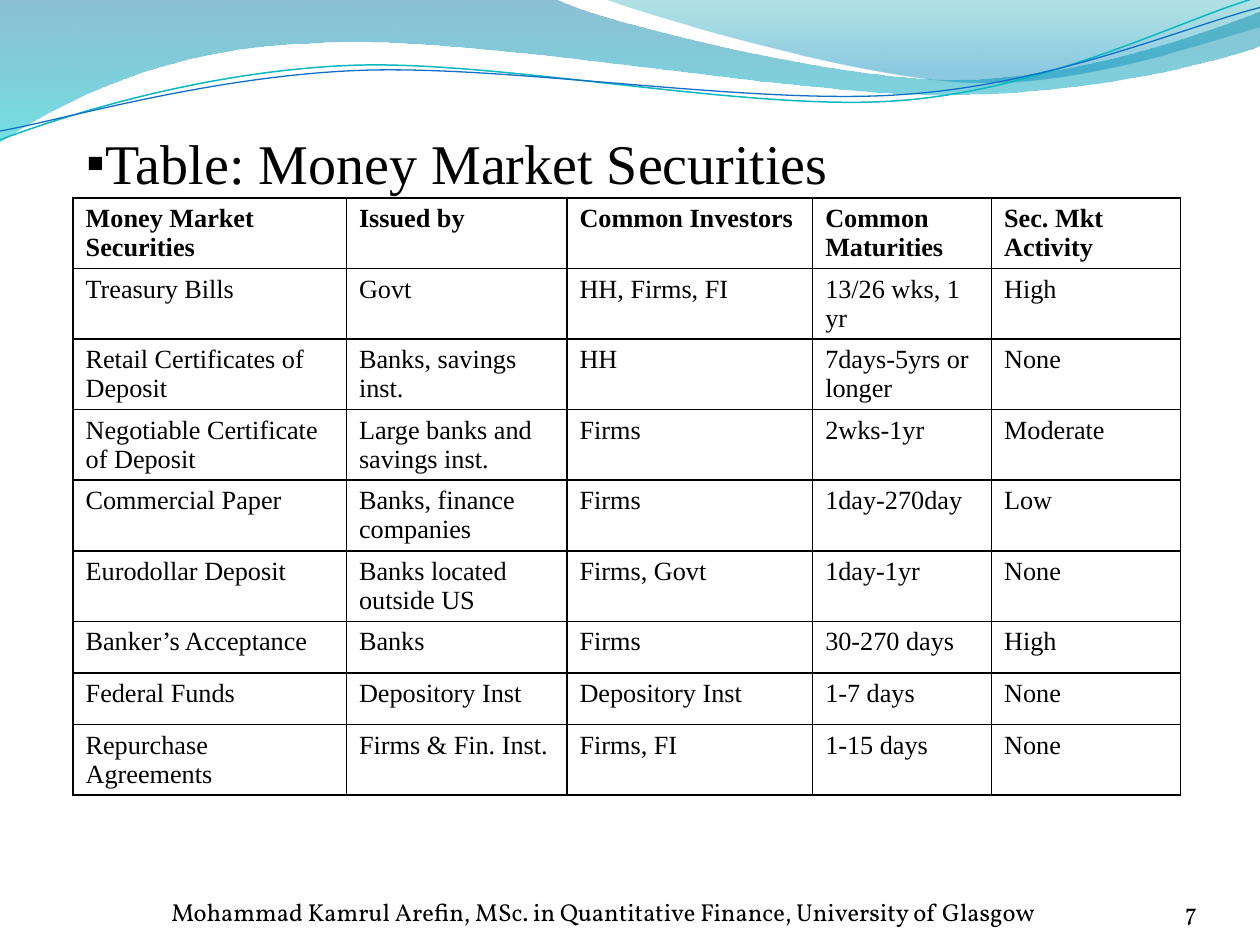
from lxml import etree
from pptx import Presentation
from pptx.dml.color import RGBColor
from pptx.enum import text as t
from pptx.oxml import ns
from pptx.util import Inches, Pt

SERIF = "Times New Roman"


def add_run(para, words, size, font, bold=False):
    run = para.add_run()
    run.text = words
    run.font.size = Pt(size)
    run.font.name = font
    run.font.bold = bold
    run.font.color.rgb = RGBColor.from_string("000000")


def add_wave(start, parts, closed):
    """Draw an outline; a part is a line end (x, y) or a Bézier (x1, y1, x2, y2, x, y)."""
    pen = slide.shapes.build_freeform(Inches(start[0]), Inches(start[1]), scale=1.0)
    for part in parts:
        dots = [(Inches(x), Inches(y)) for x, y in zip(part[::2], part[1::2])]
        pen.add_line_segments(dots, close=False)
    wave = pen.convert_to_shape()
    wave.shadow.inherit = False
    # Join the three points of each Bézier into one curve
    path = next(wave._element.iter(ns.qn("a:path")))
    steps = iter(path.findall(ns.qn("a:lnTo")))
    for part in parts:
        step = next(steps)
        if len(part) == 6:
            step.tag = ns.qn("a:cubicBezTo")
            for i in range(2):
                extra = next(steps)
                step.append(extra[0])
                path.remove(extra)
    if closed:
        etree.SubElement(path, ns.qn("a:close"))
    return wave


prs = Presentation()
prs.slide_width, prs.slide_height = Inches(10), Inches(7.5)
slide = prs.slides.add_slide(prs.slide_layouts[6])

# Filled waves: start, outline, gradient stops (position, colour, opacity)
bands = [
    ((0, 0),
     [(4.4, -0.01), (4.76, 0.17, 6.64, 0.63, 7.58, 0.63),
      (8.53, 0.63, 9.58, 0.26, 10, 0.09), (10.01, 0.36),
      (9.83, 0.44, 8.7, 0.76, 7.46, 0.75), (6.22, 0.75, 3.82, 0.28, 2.57, 0.34),
      (1.29, 0.36, 0.46, 0.83, -0.01, 1.13)],
     [(0, "0074A1", 45), (1, "00C6CF", 55)]),
    ((4.79, -0.01),
     [(5.09, 0.11, 6.82, 0.62, 7.69, 0.65), (8.56, 0.69, 9.61, 0.32, 10, 0.21), (10, 0)],
     [(0, "00A1A9", 30), (0.8, "008BBF", 45)]),
]
for start, parts, stops in bands:
    band = add_wave(start, parts, True)
    band.line.fill.background()
    band.fill.gradient()
    band.fill.gradient_angle = 270
    for stop, (pos, color, alpha) in zip(band.fill.gradient_stops, stops):
        stop.position = pos
        stop.color.rgb = RGBColor.from_string(color)
    for node, (pos, color, alpha) in zip(band._element.spPr.iter(ns.qn("a:srgbClr")), stops):
        etree.SubElement(node, ns.qn("a:alpha"), val=str(alpha * 1000))

# Thin wave lines
lines = [
    ((0, 1.11),
     [(0.48, 0.93, 1.58, 0.57, 2.77, 0.52), (3.95, 0.47, 5.93, 0.89, 7.13, 0.8),
      (8.33, 0.71, 9.38, 0.15, 9.98, -0.02)], "0AB8BF", 0.85),
    ((0, 1.04),
     [(0.47, 0.96, 1.64, 0.61, 2.83, 0.56), (4.03, 0.51, 5.97, 0.84, 7.17, 0.75),
      (8.36, 0.67, 9.41, 0.21, 10, 0.06)], "0F6FC6", 0.75),
]
for start, parts, color, width in lines:
    line = add_wave(start, parts, False)
    line.fill.background()
    line.line.color.rgb = RGBColor.from_string(color)
    line.line.width = Pt(width)

# Title
title = slide.shapes.add_textbox(Inches(0.33), Inches(0.92), Inches(9.42), Inches(0.75))
title.text_frame.word_wrap = True
para = title.text_frame.paragraphs[0]
para.alignment = t.PP_ALIGN.JUSTIFY
para.line_spacing = 1.1
para.space_before = Pt(6.4)
props = para._p.get_or_add_pPr()
props.set("marL", str(Inches(0.24)))
props.set("indent", str(Inches(0.02)))
etree.SubElement(props, ns.qn("a:buSzPct"), val="95000")
etree.SubElement(props, ns.qn("a:buFont"), typeface=SERIF)
etree.SubElement(props, ns.qn("a:buChar"), char="▪")
add_run(para, "Table: Money Market Securities", 32, SERIF)

# Page number and footer
feet = [
    (8.67, 0.83, t.PP_ALIGN.RIGHT, "7"),
    (0.58, 8.42, t.PP_ALIGN.CENTER,
     "Mohammad Kamrul Arefin, MSc. in Quantitative Finance, University of Glasgow"),
]
for left, width, align, words in feet:
    frame = slide.shapes.add_textbox(
        Inches(left), Inches(6.95), Inches(width), Inches(0.4)).text_frame
    frame.word_wrap = True
    frame.vertical_anchor = t.MSO_ANCHOR.BOTTOM
    frame.margin_left = frame.margin_right = frame.margin_top = frame.margin_bottom = 0
    frame.paragraphs[0].alignment = align
    add_run(frame.paragraphs[0], words, 14, "Vollkorn")

# Securities table; a line break in a cell starts a new paragraph
rows = [
    ["Money Market\nSecurities", "Issued by", "Common Investors", "Common Maturities",
     "Sec. Mkt\nActivity"],
    ["Treasury Bills", "Govt", "HH, Firms, FI", "13/26 wks, 1 yr", "High"],
    ["Retail Certificates of Deposit", "Banks, savings inst.", "HH",
     "7days-5yrs or longer", "None"],
    ["Negotiable Certificate of Deposit", "Large banks and savings inst.", "Firms",
     "2wks-1yr", "Moderate"],
    ["Commercial Paper", "Banks, finance companies", "Firms", "1day-270day", "Low"],
    ["Eurodollar Deposit", "Banks located outside US", "Firms, Govt", "1day-1yr", "None"],
    ["Banker’s Acceptance", "Banks", "Firms", "30-270 days", "High"],
    ["Federal Funds", "Depository Inst", "Depository Inst", "1-7 days", "None"],
    ["Repurchase Agreements", "Firms & Fin. Inst.", "Firms, FI", "1-15 days", "None"],
]
widths = [2.17, 1.75, 1.95, 1.42, 1.5]
high = 0.41
table = slide.shapes.add_table(
    len(rows), len(widths), Inches(0.58), Inches(1.57),
    Inches(sum(widths)), Inches(high * len(rows))).table
for col, width in zip(table.columns, widths):
    col.width = Inches(width)
for r, row in enumerate(rows):
    table.rows[r].height = Inches(high)
    for c, words in enumerate(row):
        cell = table.cell(r, c)
        cell.margin_bottom = Inches(0.01)
        for i, part in enumerate(words.split("\n")):
            frame = cell.text_frame
            para = frame.add_paragraph() if i else frame.paragraphs[0]
            add_run(para, part, 15, SERIF, bold=r == 0)
        props = cell._tc.get_or_add_tcPr()
        for side in ("lnL", "lnR", "lnT", "lnB"):
            edge = etree.SubElement(props, ns.qn("a:" + side), w=str(Pt(1)))
            fill = etree.SubElement(edge, ns.qn("a:solidFill"))
            etree.SubElement(fill, ns.qn("a:srgbClr"), val="000000")
        cell.fill.background()

prs.save("out.pptx")
